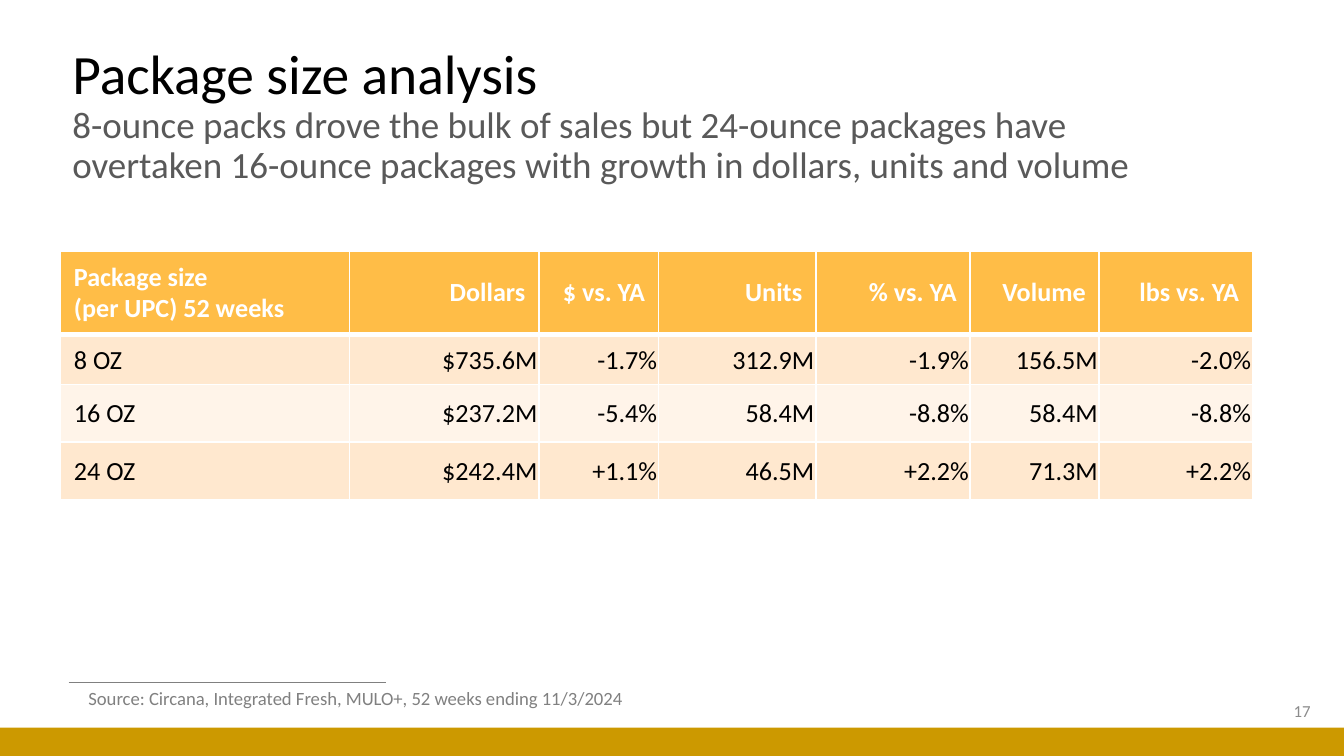
from lxml import etree
from pptx import Presentation
from pptx.dml.color import RGBColor
from pptx.enum import shapes, text
from pptx.oxml import ns
from pptx.util import Inches, Pt

BLACK = RGBColor(0x00, 0x00, 0x00)
WHITE = RGBColor(0xFF, 0xFF, 0xFF)
DARK_GRAY = RGBColor(0x59, 0x59, 0x59)
GRAY = RGBColor(0x80, 0x80, 0x80)
LIGHT_GRAY = RGBColor(0x8C, 0x8C, 0x8C)
GOLD = RGBColor(0xCC, 0x99, 0x00)
AMBER = RGBColor(0xFF, 0xBD, 0x47)
PEACH = RGBColor(0xFF, 0xE8, 0xCF)
CREAM = RGBColor(0xFF, 0xF4, 0xE9)

FONT = "Calibri"
SLIDE_WIDTH = 10
SLIDE_HEIGHT = SLIDE_WIDTH * 9 / 16
COLUMN_WIDTHS = [2.15, 1.41, 0.89, 1.17, 1.15, 0.96, 1.14]
ROW_HEIGHTS = [0.62, 0.37, 0.43, 0.43]
PACKAGE_SALES = [
    ["Package size \v(per UPC) 52 weeks", "Dollars", "$ vs. YA", "Units",
     "% vs. YA", "Volume", "lbs vs. YA"],
    ["8 OZ", "$735.6M", "-1.7%", "312.9M", "-1.9%", "156.5M", "-2.0%"],
    ["16 OZ", "$237.2M", "-5.4%", "58.4M", "-8.8%", "58.4M", "-8.8%"],
    ["24 OZ", "$242.4M", "+1.1%", "46.5M", "+2.2%", "71.3M", "+2.2%"],
]


def set_font(font, size, color, bold=False):
    font.name = FONT
    font.size = Pt(size)
    font.color.rgb = color
    font.bold = bold


def add_frame(slide, left, top, width, height, wrap=True):
    box = slide.shapes.add_textbox(Inches(left), Inches(top), Inches(width), Inches(height))
    frame = box.text_frame
    frame.word_wrap = wrap
    frame.vertical_anchor = text.MSO_ANCHOR.MIDDLE
    return frame


def add_heading(slide, left, top, width, height):
    heading = add_frame(slide, left, top, width, height).paragraphs[0]
    heading.line_spacing = 0.9
    title = heading.add_run()
    title.text = "Package size analysis"
    set_font(title.font, 29.7, BLACK)
    heading.add_line_break()
    takeaway = heading.add_run()
    takeaway.text = ("8-ounce packs drove the bulk of sales but 24-ounce packages have "
                     "overtaken 16-ounce packages with growth in dollars, units and volume")
    set_font(takeaway.font, 19.8, DARK_GRAY)


def set_borders(cell, top, bottom):
    properties = cell._tc.get_or_add_tcPr()
    for side, width in (("L", 1), ("R", 1), ("T", top), ("B", bottom)):
        border = etree.SubElement(properties, ns.qn(f"a:ln{side}"), w=str(Pt(width)))
        fill = etree.SubElement(border, ns.qn("a:solidFill"))
        etree.SubElement(fill, ns.qn("a:srgbClr"), val=str(WHITE))


def style_cell(cell, row, column):
    is_header = row == 0
    set_borders(cell, top=3 if row == 1 else 1, bottom=3 if is_header else 1)
    cell.fill.solid()
    cell.fill.fore_color.rgb = AMBER if is_header else (PEACH if row % 2 else CREAM)
    cell.vertical_anchor = text.MSO_ANCHOR.MIDDLE
    if not is_header:
        cell.margin_left = cell.margin_right = Inches(0.01 if column else 0.1)
        cell.margin_top = Inches(0.01)
        cell.margin_bottom = 0
    label = cell.text_frame.paragraphs[0]
    label.alignment = text.PP_ALIGN.RIGHT if column else text.PP_ALIGN.LEFT
    set_font(label.font, 14, WHITE if is_header else BLACK, is_header)


def add_sales_table(slide, left, top):
    sales = slide.shapes.add_table(
        len(ROW_HEIGHTS), len(COLUMN_WIDTHS), Inches(left), Inches(top),
        Inches(sum(COLUMN_WIDTHS)), Inches(sum(ROW_HEIGHTS))).table
    for column, width in zip(sales.columns, COLUMN_WIDTHS):
        column.width = Inches(width)
    for row, height in zip(sales.rows, ROW_HEIGHTS):
        row.height = Inches(height)
    for row, values in enumerate(PACKAGE_SALES):
        for column, value in enumerate(values):
            cell = sales.cell(row, column)
            cell.text_frame.paragraphs[0].text = value
            style_cell(cell, row, column)


def add_footer(slide, left, top, width, height):
    rule = slide.shapes.add_connector(
        shapes.MSO_CONNECTOR.STRAIGHT, Inches(left + 0.51), Inches(top + 0.02),
        Inches(left + 2.87), Inches(top + 0.02))
    rule.line.color.rgb = GRAY
    rule.line.width = Pt(0.5)
    etree.SubElement(rule._element.spPr, ns.qn("a:effectLst"))

    band_height = 0.21
    band = slide.shapes.add_shape(
        shapes.MSO_SHAPE.RECTANGLE, Inches(left), Inches(top + height - band_height),
        Inches(width), Inches(band_height))
    band.shadow.inherit = False
    band.fill.solid()
    band.fill.fore_color.rgb = GOLD
    band.line.fill.background()

    page = add_frame(slide, left + width - 2.4, top + 0.08, 2.25, 0.3).paragraphs[0]
    page.text = "17"
    page.alignment = text.PP_ALIGN.RIGHT
    set_font(page.font, 9, LIGHT_GRAY)

    source = add_frame(slide, left + 0.56, top, 4.26, 0.27, wrap=False).paragraphs[0]
    source.text = "Source: Circana, Integrated Fresh, MULO+, 52 weeks ending 11/3/2024"
    set_font(source.font, 10, GRAY)


def main():
    deck = Presentation()
    deck.slide_width = Inches(SLIDE_WIDTH)
    deck.slide_height = Inches(SLIDE_HEIGHT)
    slide = deck.slides.add_slide(deck.slide_layouts[6])
    footer_top = 5.06
    add_footer(slide, 0, footer_top, SLIDE_WIDTH, SLIDE_HEIGHT - footer_top)
    add_heading(slide, 0.44, 0.34, 8.53, 1.06)
    add_sales_table(slide, 0.45, 1.87)
    deck.save("out.pptx")


if __name__ == "__main__":
    main()
